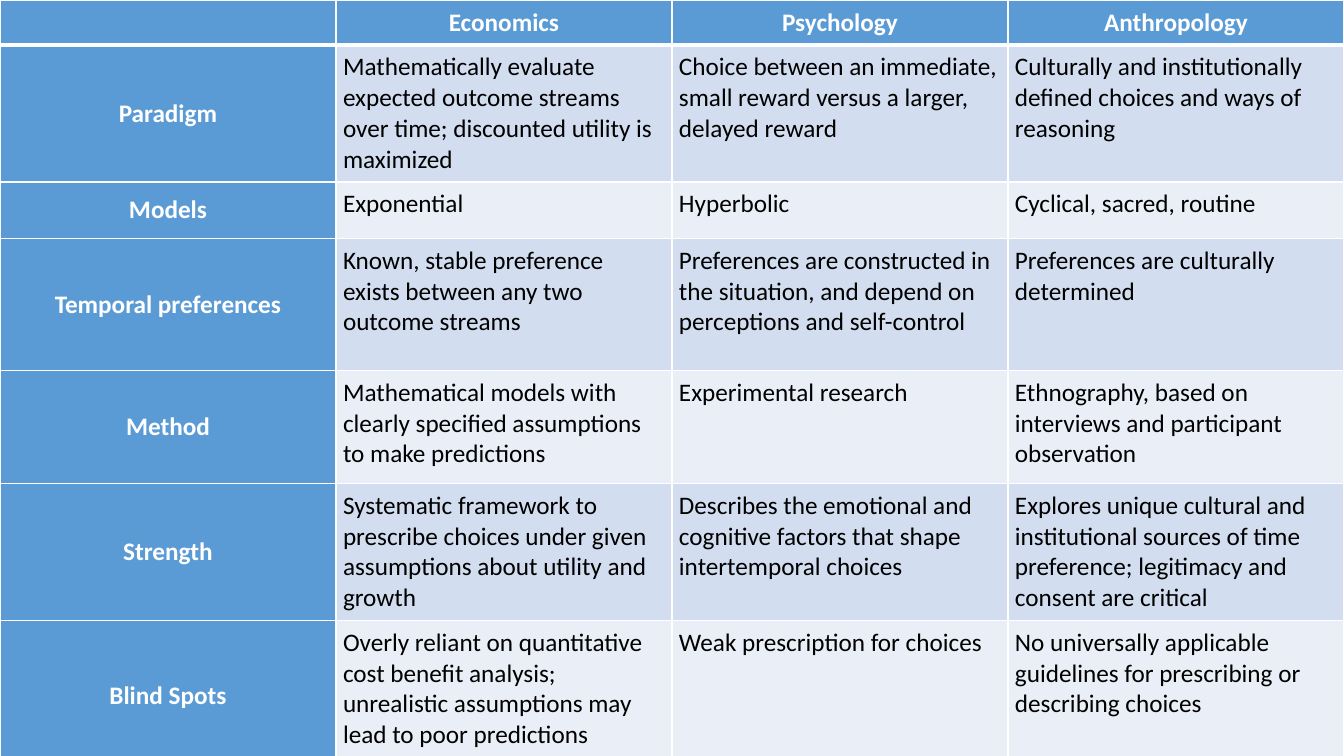
from lxml import etree
from pptx import Presentation
from pptx.dml.color import RGBColor
from pptx.enum.text import MSO_ANCHOR as Anchor, PP_ALIGN as Align
from pptx.oxml.ns import qn
from pptx.util import Inches, Pt

FONT = "Calibri"
WHITE, BLACK, BLUE = "FFFFFF", "000000", "5B9BD5"
BANDS = ("D2DEEF", "EAEFF7")
PAGE_WIDTH, PAGE_HEIGHT = 13.33, 7.5
ROW_HEIGHTS = (0.38, 1.31, 0.56, 1.31, 1.12, 1.31, 1.5)
ROWS = (
    ("", "Economics", "Psychology", "Anthropology"),
    ("Paradigm",
     "Mathematically evaluate expected outcome streams over time; discounted utility is maximized",
     "Choice between an immediate, small reward versus a larger, delayed reward",
     "Culturally and institutionally defined choices and ways of reasoning"),
    ("Models", "Exponential", "Hyperbolic", "Cyclical, sacred, routine"),
    ("Temporal preferences",
     "Known, stable preference exists between any two outcome streams",
     "Preferences are constructed in the situation, and depend on perceptions and self-control",
     "Preferences are culturally determined"),
    ("Method",
     "Mathematical models with clearly specified assumptions to make predictions",
     "Experimental research",
     "Ethnography, based on interviews and participant observation"),
    ("Strength",
     "Systematic framework to prescribe choices under given assumptions about utility and growth",
     "Describes the emotional and cognitive factors that shape intertemporal choices",
     "Explores unique cultural and institutional sources of time preference; "
     "legitimacy and consent are critical"),
    ("Blind Spots",
     "Overly reliant on quantitative cost benefit analysis; "
     "unrealistic assumptions may lead to poor predictions",
     "Weak prescription for choices",
     "No universally applicable guidelines for prescribing or describing choices"),
)


def color(value):
    return RGBColor.from_string(value)


def set_borders(cell, top, bottom):
    """White lines on all four sides; widths in points."""
    properties = cell._tc.get_or_add_tcPr()
    widths = {"a:lnL": 1, "a:lnR": 1, "a:lnT": top, "a:lnB": bottom}
    # Border lines come before the fill in the cell properties
    for position, (tag, width) in enumerate(widths.items()):
        line = etree.Element(qn(tag), w=str(Pt(width)))
        fill = etree.SubElement(line, qn("a:solidFill"))
        etree.SubElement(fill, qn("a:srgbClr"), val=WHITE)
        properties.insert(position, line)


def fill_cell(cell, text, background, heading):
    cell.fill.solid()
    cell.fill.fore_color.rgb = color(background)
    cell.margin_left = cell.margin_right = Inches(0.07)
    cell.margin_top = cell.margin_bottom = Inches(0.07)
    cell.vertical_anchor = Anchor.MIDDLE if heading else Anchor.TOP
    para = cell.text_frame.paragraphs[0]
    para.alignment = Align.CENTER if heading else Align.LEFT
    para.font.size = Pt(18)
    if text:
        span = para.add_run()
        span.text = text
        span.font.name = FONT
        span.font.size = Pt(18)
        span.font.bold = heading
        span.font.color.rgb = color(WHITE if heading else BLACK)


def add_comparison(page, left, top, width):
    column_count = len(ROWS[0])
    frame = page.shapes.add_table(
        len(ROWS), column_count, Inches(left), Inches(top),
        Inches(width), Inches(sum(ROW_HEIGHTS)))
    table = frame.table
    table.horz_banding = False

    # Equal columns, rows by content
    for column in table.columns:
        column.width = Inches(width / column_count)
    for row, height in zip(table.rows, ROW_HEIGHTS):
        row.height = Inches(height)

    # Headings along the top and left, banded body
    for r, texts in enumerate(ROWS):
        for c, text in enumerate(texts):
            heading = r == 0 or c == 0
            background = BLUE if heading else BANDS[(r - 1) % 2]
            cell = table.cell(r, c)
            fill_cell(cell, text, background, heading)
            set_borders(cell, top=3 if r == 1 else 1, bottom=3 if r == 0 else 1)


def main():
    deck = Presentation()
    deck.slide_width, deck.slide_height = Inches(PAGE_WIDTH), Inches(PAGE_HEIGHT)
    page = deck.slides.add_slide(deck.slide_layouts[6])
    add_comparison(page, 0, 0, PAGE_WIDTH)
    deck.save("out.pptx")


if __name__ == "__main__":
    main()
